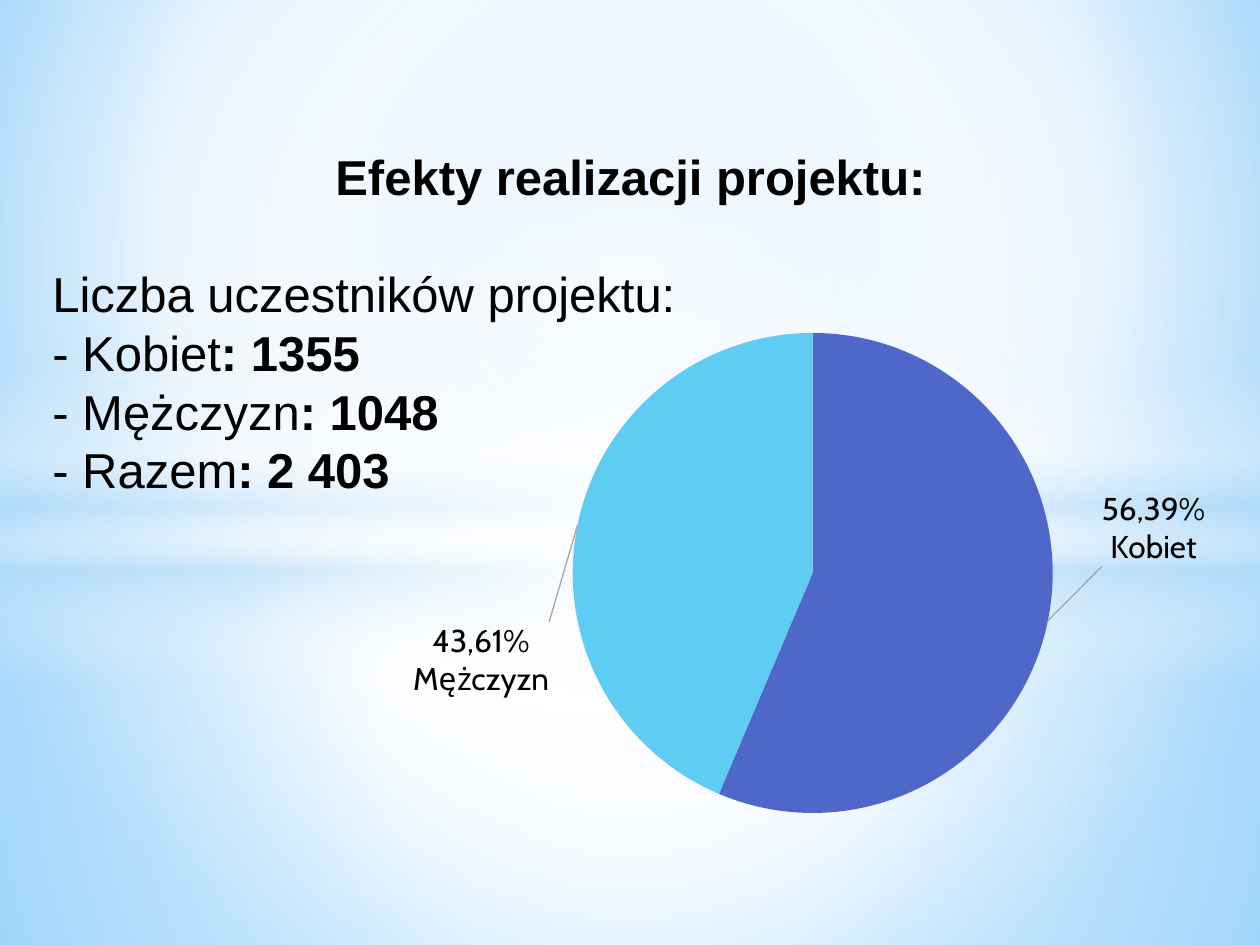
"""Build a slide on project results with a pie chart of participants."""
from lxml.etree import SubElement
from pptx import Presentation
from pptx.chart.data import CategoryChartData
from pptx.dml.color import RGBColor
from pptx.enum.chart import XL_CHART_TYPE, XL_LABEL_POSITION
from pptx.enum.shapes import MSO_SHAPE
from pptx.enum.text import MSO_ANCHOR, PP_ALIGN
from pptx.oxml import parse_xml
from pptx.oxml.ns import nsdecls, qn
from pptx.util import Pt

PX = 914400 / 126
BLACK = RGBColor(0x00, 0x00, 0x00)
WHITE = RGBColor(0xFF, 0xFF, 0xFF)
GRAY = RGBColor(0xA6, 0xA6, 0xA6)
SKY = RGBColor(0x9E, 0xD5, 0xFF)
AZURE = RGBColor(0x5B, 0xB9, 0xFF)
PALE = RGBColor(0xB4, 0xDC, 0xFA)
INDIGO = RGBColor(0x4E, 0x67, 0xC8)
CYAN = RGBColor(0x5E, 0xCC, 0xF3)

TITLE = [[("Efekty realizacji projektu:", True)]]
RESULTS = [
    [("Liczba uczestników projektu:", False)],
    [("- Kobiet", False), (": 1355", True)],
    [("- Mężczyzn", False), (": 1048", True)],
    [("- Razem", False), (": 2 403", True)],
]
SLICES = [
    ("Kobieta", 56.39, INDIGO, "56,39%\nKobiet", (47, -132)),
    ("Mężczyzna", 43.61, CYAN, "43,61%\nMężczyzn", (-21, 175)),
]
CHART_BOX = (372, 315, 850, 514)
PIE_BOX = (573, 333, 480, 480)

CENTRE = (50, 50, 50, 50)
BACKGROUND_STOPS = [(0, SKY, 100), (60, WHITE, 100), (100, AZURE, 100)]
BACKDROP = [
    (MSO_SHAPE.RECTANGLE, (0, 533, 1260, 412), CENTRE,
     [(0, WHITE, 91), (37, WHITE, 76), (100, PALE, 79)]),
    (MSO_SHAPE.RECTANGLE, (0, 0, 1260, 533), CENTRE,
     [(0, WHITE, 89), (48, WHITE, 62), (100, PALE, 79)]),
    (MSO_SHAPE.RECTANGLE, (0, 365, 1260, 315), None,
     [(0, WHITE, 0), (29, WHITE, 30), (45, PALE, 40),
      (55, WHITE, 26), (65, PALE, 60), (100, WHITE, 0)]),
    (MSO_SHAPE.OVAL, (0, 220, 1260, 703), CENTRE,
     [(0, WHITE, 100), (54, WHITE, 0)]),
]


def px(*lengths):
    return [round(length * PX) for length in lengths]


def apply_gradient(fill, element, stops, focus):
    """Fill with a radial gradient around focus, or a vertical one without it."""
    fill.solid()
    stop_xml = "".join(
        f'<a:gs pos="{position * 1000}"><a:srgbClr val="{color}">'
        f'<a:alpha val="{alpha * 1000}"/></a:srgbClr></a:gs>'
        for position, color, alpha in stops)
    direction = '<a:lin ang="5400000" scaled="0"/>'
    if focus:
        sides = " ".join(f'{side}="{value * 1000}"' for side, value in zip("ltrb", focus))
        direction = f'<a:path path="circle"><a:fillToRect {sides}/></a:path>'
    gradient = parse_xml(f'<a:gradFill {nsdecls("a")} rotWithShape="1">'
                         f'<a:gsLst>{stop_xml}</a:gsLst>{direction}</a:gradFill>')
    solid = next(element.iter(qn("a:solidFill")))
    solid.getparent().replace(solid, gradient)


def format_font(font, *, size, name, bold, color=BLACK):
    font.size, font.name, font.bold = Pt(size), name, bold
    font.color.rgb = color


def write_text(shape, lines, *, size=28, font="Arial", align=PP_ALIGN.LEFT, spacing=33.5):
    frame = shape.text_frame
    frame.word_wrap = True
    frame.vertical_anchor = MSO_ANCHOR.TOP
    frame.margin_top = frame.margin_bottom = 0
    for index, line in enumerate(lines):
        paragraph = frame.add_paragraph() if index else frame.paragraphs[0]
        paragraph.alignment = align
        paragraph.line_spacing = Pt(spacing)
        for text, bold in line:
            run = paragraph.add_run()
            run.text = text
            format_font(run.font, size=size, name=font, bold=bold)


def add_layout(parent, position, **values):
    """Insert a manual chart layout at the given child position."""
    layout = parent.find(qn("c:layout"))
    if layout is not None:
        parent.remove(layout)
    layout = parse_xml(f'<c:layout {nsdecls("c")}><c:manualLayout/></c:layout>')
    for name, value in values.items():
        SubElement(layout[0], qn(f"c:{name}")).set("val", str(value))
    parent.insert(position, layout)


def add_pie(slide):
    data = CategoryChartData(number_format="0.00%")
    data.categories = [entry[0] for entry in SLICES]
    data.add_series("Series 1", [round(entry[1] / 100, 4) for entry in SLICES])
    chart = slide.shapes.add_chart(XL_CHART_TYPE.PIE, *px(*CHART_BOX), data).chart
    chart.has_legend = chart.has_title = False
    format_font(chart.font, size=10, name="Cabin", bold=False)
    left, top, width, height = CHART_BOX
    pie_left, pie_top, pie_width, pie_height = PIE_BOX
    add_layout(chart.element.chart.plotArea, 0, layoutTarget="inner",
               xMode="edge", yMode="edge",
               x=round((pie_left - left) / width, 3), y=round((pie_top - top) / height, 3),
               w=round(pie_width / width, 3), h=round(pie_height / height, 3))
    series = chart.plots[0].series[0]
    labels = series.data_labels
    labels.show_value = labels.show_category_name = True
    labels.number_format, labels.number_format_is_linked = "0.00%", False
    labels.position = XL_LABEL_POSITION.OUTSIDE_END
    format_font(labels.font, size=18, name="Cabin", bold=True)
    for index, (_, _, color, text, (shift_x, shift_y)) in enumerate(SLICES):
        point = series.points[index]
        point.format.fill.solid()
        point.format.fill.fore_color.rgb = color
        point.format.line.fill.background()
        label = point.data_label
        label.text_frame.text = text
        label.position = XL_LABEL_POSITION.OUTSIDE_END
        for paragraph in label.text_frame.paragraphs:
            format_font(paragraph.runs[0].font, size=18, name="Cabin", bold=False)
        label_element = labels._element.dLbl_lst[index]
        label_element.find(qn("c:showCatName")).set("val", "1")
        add_layout(label_element, 1, x=round(shift_x / width, 3), y=round(shift_y / height, 3))
    leader_switch = labels._element.find(qn("c:showLeaderLines"))
    if leader_switch is None:
        leader_switch = SubElement(labels._element, qn("c:showLeaderLines"))
    leader_switch.set("val", "1")
    leader_switch.addnext(parse_xml(
        f'<c:leaderLines {nsdecls("c", "a")}><c:spPr><a:ln w="9525"><a:solidFill>'
        f'<a:srgbClr val="{GRAY}"/></a:solidFill></a:ln></c:spPr></c:leaderLines>'))


def main():
    presentation = Presentation()
    presentation.slide_width, presentation.slide_height = px(1260, 945)
    slide = presentation.slides.add_slide(presentation.slide_layouts[5])
    apply_gradient(slide.background.fill, slide.element, BACKGROUND_STOPS, (20, 10, 20, 60))
    for kind, box, focus, stops in BACKDROP:
        shape = slide.shapes.add_shape(kind, *px(*box))
        shape.shadow.inherit = False
        shape.line.fill.background()
        apply_gradient(shape.fill, shape.element, stops, focus)
    title = slide.shapes.title
    slide.shapes.element.append(title.element)
    title.left, title.top, title.width, title.height = px(40, 147, 1181, 59)
    write_text(title, TITLE, align=PP_ALIGN.CENTER)
    write_text(slide.shapes.add_textbox(*px(40, 264, 1181, 236)), RESULTS)
    add_pie(slide)
    presentation.save("out.pptx")


if __name__ == "__main__":
    main()
